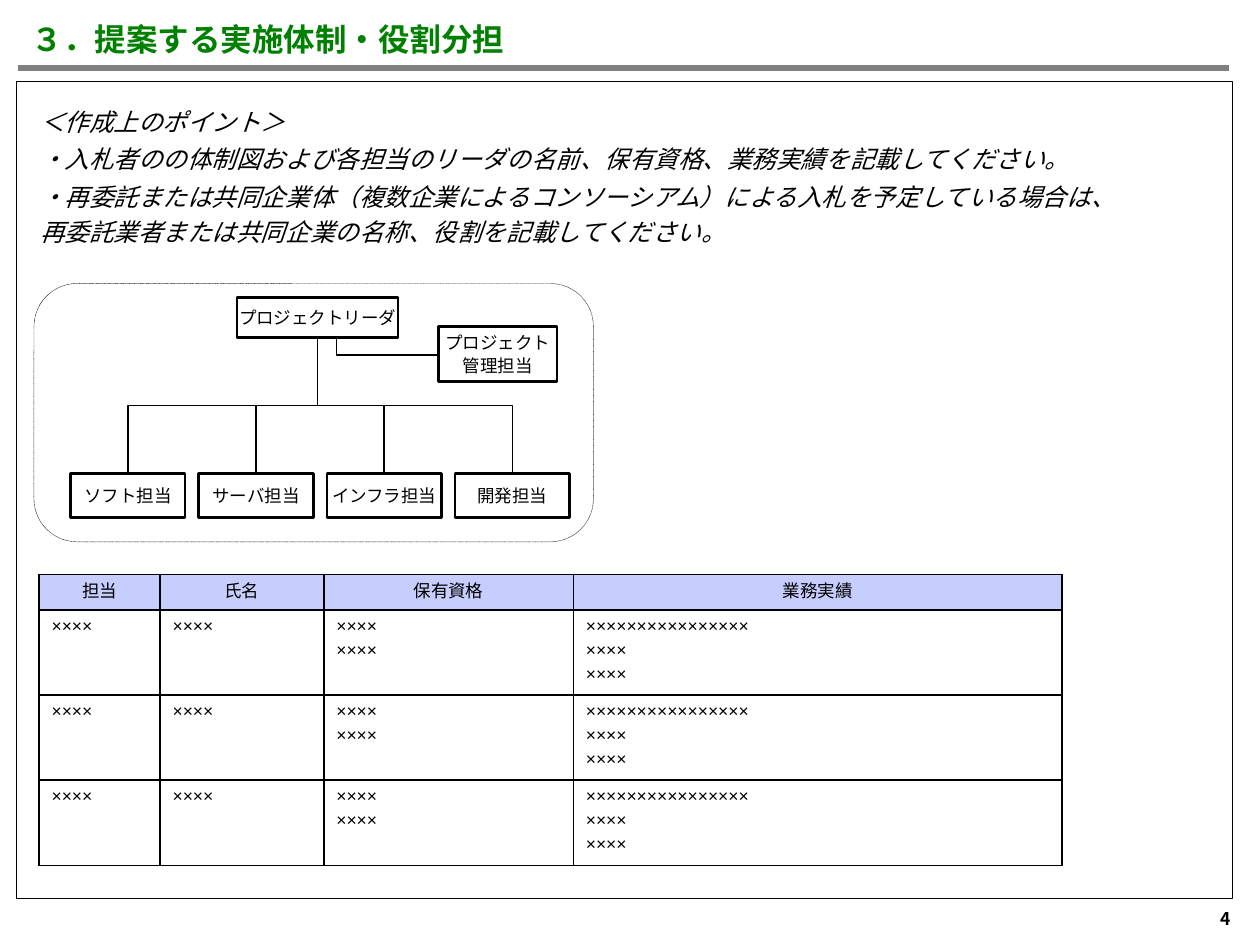
"""Build the slide on the proposed project organisation and its roles."""
from lxml.etree import SubElement
from pptx import Presentation
from pptx.dml.color import RGBColor
from pptx.enum.dml import MSO_LINE
from pptx.enum.shapes import MSO_CONNECTOR as LINK, MSO_SHAPE as SHAPE
from pptx.enum.text import MSO_ANCHOR as ANCHOR, MSO_AUTO_SIZE as FIT, PP_ALIGN as ALIGN
from pptx.oxml.ns import qn
from pptx.util import Inches, Pt

SANS, GOTHIC = "Arial", "Noto Sans CJK JP"
color = RGBColor.from_string


def write(frame, lines, size, name=SANS, align=ALIGN.LEFT, before=0, spacing=1, ink="000000", bold=False, italic=False):
    frame.text = "\n".join(lines)
    for para in frame.paragraphs:
        para.alignment = align
        para.space_before, para.line_spacing = Pt(before), spacing
        font = para.font
        font.size, font.name, font.bold, font.italic = Pt(size), name, bold, italic
        font.color.rgb = color(ink)
        for span in para.runs:
            SubElement(span.font._element, qn("a:ea"), typeface=name)


def outline(shape, ink, width):
    shape.line.color.rgb = color(ink)
    shape.line.width = Pt(width)
    properties = shape._element.spPr
    if properties.find(qn("a:effectLst")) is None:
        SubElement(properties, qn("a:effectLst"))


deck = Presentation()
deck.slide_width, deck.slide_height = Inches(10), Inches(7.5)
page = deck.slides.add_slide(deck.slide_layouts[5])
shapes = page.shapes

rule = shapes.add_connector(LINK.STRAIGHT, Inches(0.14), Inches(0.54), Inches(9.75), Inches(0.54))
outline(rule, "808080", 3)
border = shapes.add_shape(SHAPE.RECTANGLE, Inches(0.13), Inches(0.65), Inches(9.65), Inches(6.48))
border.fill.solid()
border.fill.fore_color.rgb = color("FFFFFF")
outline(border, "000000", 0.5)

title = shapes.title
title.left, title.top, title.width, title.height = Inches(0.25), Inches(0.11), Inches(9), Inches(0.35)
frame = title.text_frame
frame.auto_size, frame.vertical_anchor = FIT.NONE, ANCHOR.BOTTOM
frame.margin_left = frame.margin_right = frame.margin_bottom = 0
write(frame, ["３．提案する実施体制・役割分担"], 18, GOTHIC, ink="008000", bold=True)

number = shapes.add_textbox(Inches(9.36), Inches(7.14), Inches(0.67), Inches(0.3)).text_frame
number.margin_left, number.margin_top = Inches(0.16), Inches(0.07)
write(number, ["4"], 10, GOTHIC, ALIGN.CENTER, bold=True)

points = shapes.add_textbox(Inches(0.22), Inches(0.75), Inches(8.65), Inches(1.26)).text_frame
points.word_wrap = True
write(points, [
    "＜作成上のポイント＞",
    "・入札者のの体制図および各担当のリーダの名前、保有資格、業務実績を記載してください。",
    "・再委託または共同企業体（複数企業によるコンソーシアム）による入札を予定している場合は、"
    "再委託業者または共同企業の名称、役割を記載してください。",
], 14, before=1.4, spacing=1.2, italic=True)

group_area = shapes.add_shape(SHAPE.ROUNDED_RECTANGLE, Inches(0.27), Inches(2.25), Inches(4.44), Inches(2.05))
group_area.fill.background()
outline(group_area, "000000", 0.25)
group_area.line.dash_style = MSO_LINE.ROUND_DOT

trunk_x, trunk_top, team_top = 2.52, 2.69, 3.75
teams = ["ソフト担当", "サーバ担当", "インフラ担当", "開発担当"]
team_lefts = [0.56 + 1.017 * index for index in range(len(teams))]

for left in team_lefts:
    team_x = left + 0.455
    side = 1 if team_x > trunk_x else -1
    middle_x, middle_y = (team_x + trunk_x) / 2, (team_top + trunk_top) / 2
    half_length, half_span = (team_top - trunk_top) / 2, abs(team_x - trunk_x) / 2
    branch = shapes.add_connector(
        LINK.ELBOW,
        Inches(middle_x + side * half_length), Inches(middle_y - half_span),
        Inches(middle_x - side * half_length), Inches(middle_y + half_span))
    branch._element.spPr.xfrm.set("rot", str((90 if side > 0 else 270) * 60000))
    outline(branch, "000000", 0.75)

builder = shapes.build_freeform(Inches(2.67), Inches(2.68))
builder.add_line_segments([(Inches(2.67), Inches(2.82)), (Inches(3.48), Inches(2.82))], close=False)
side_branch = builder.convert_to_shape()
side_branch.fill.background()
outline(side_branch, "000000", 1)

boxes = [
    (["プロジェクトリーダ"], 1.88, 2.36, 1.28, 0.32),
    (["プロジェクト", "管理担当"], 3.48, 2.59, 0.94, 0.44),
] + [([team], left, 3.76, 0.91, 0.35) for team, left in zip(teams, team_lefts)]
for lines, *place in boxes:
    box = shapes.add_shape(SHAPE.RECTANGLE, *map(Inches, place))
    box.fill.solid()
    box.fill.fore_color.rgb = color("FFFFFF")
    outline(box, "000000", 1.5)
    box.text_frame.word_wrap = False
    box.text_frame.vertical_anchor = ANCHOR.MIDDLE
    write(box.text_frame, lines, 10, align=ALIGN.CENTER, before=1)

mark = "××××"
member = [[mark], [mark], [mark] * 2, [mark * 4, mark, mark]]
rows = [[["担当"], ["氏名"], ["保有資格"], ["業務実績"]]] + [member] * 3
table = shapes.add_table(4, 4, Inches(0.31), Inches(4.56), Inches(8.12), Inches(2.29)).table
for column, width in zip(table.columns, (0.96, 1.3, 1.98, 3.88)):
    column.width = Inches(width)
for row_index, row in enumerate(rows):
    header = row_index == 0
    table.rows[row_index].height = Inches(0.28 if header else 0.67)
    for column_index, lines in enumerate(row):
        cell = table.cell(row_index, column_index)
        write(cell.text_frame, lines, 10, align=ALIGN.CENTER if header else ALIGN.LEFT, before=2, spacing=1.04)
        properties = cell._tc.get_or_add_tcPr()
        for edge in ("a:lnL", "a:lnR", "a:lnT", "a:lnB"):
            line = SubElement(properties, qn(edge), w=str(Pt(1)))
            SubElement(SubElement(line, qn("a:solidFill")), qn("a:srgbClr"), val="000000")
        if header:
            cell.fill.solid()
            cell.fill.fore_color.rgb = color("C7CDFD")
        else:
            cell.fill.background()

deck.save("out.pptx")
